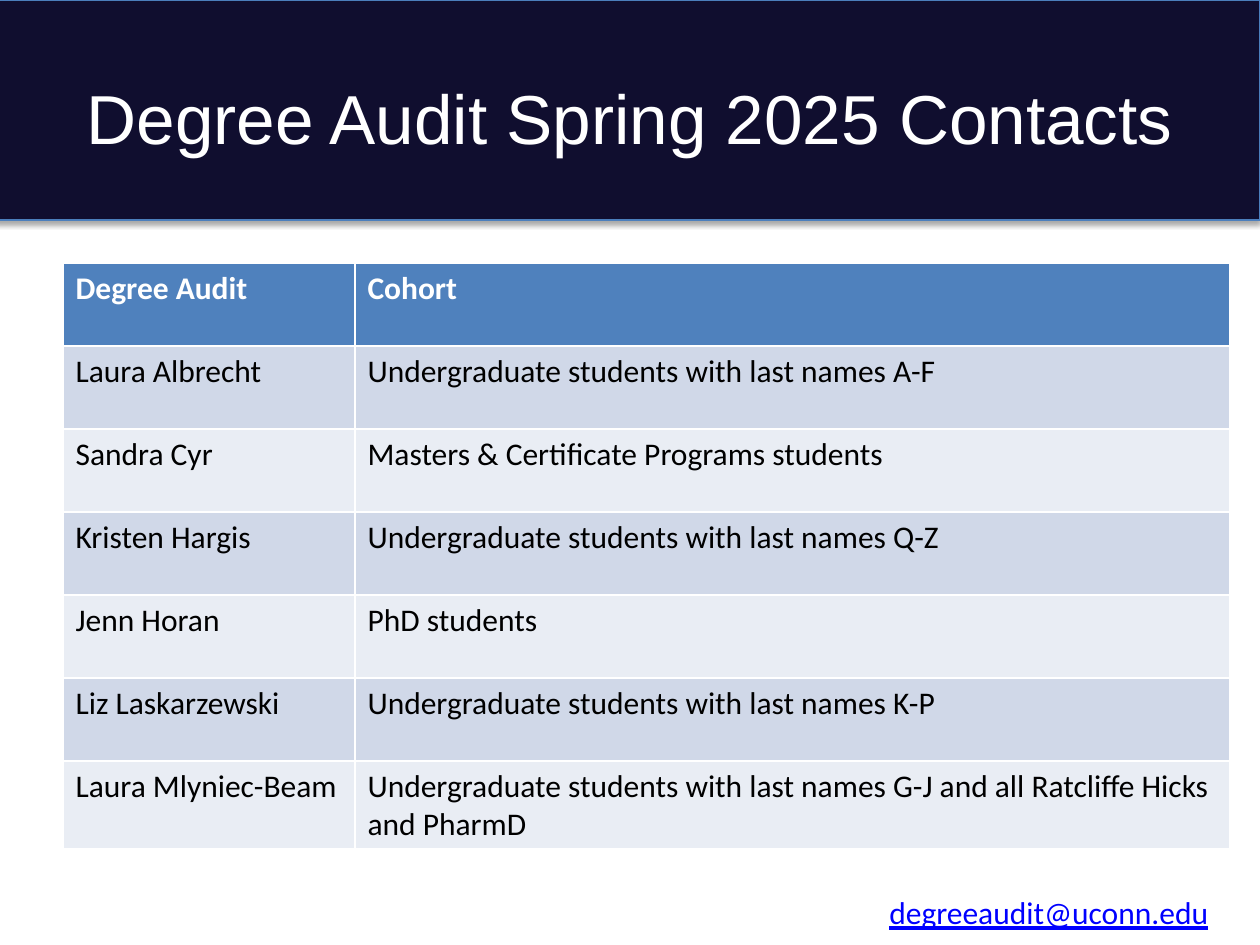
from lxml import etree
from pptx import Presentation, util as u
from pptx.dml.color import RGBColor
from pptx.enum import shapes, text
from pptx.oxml import ns

PX = 914400 / 126
WHITE = RGBColor(0xFF, 0xFF, 0xFF)
BLACK = RGBColor(0, 0, 0)
NAVY = RGBColor(0x10, 0x0E, 0x2F)
EDGE = RGBColor(0x4B, 0x7E, 0xBC)
HEADER = RGBColor(0x4F, 0x81, 0xBD)
BANDS = [RGBColor(0xE9, 0xED, 0xF4), RGBColor(0xD0, 0xD8, 0xE8)]
LINK = RGBColor(0, 0, 0xFF)
CONTACTS = [
    ("Degree Audit", "Cohort"),
    ("Laura Albrecht", "Undergraduate students with last names A-F"),
    ("Sandra Cyr", "Masters & Certificate Programs students"),
    ("Kristen Hargis", "Undergraduate students with last names Q-Z"),
    ("Jenn Horan", "PhD students"),
    ("Liz Laskarzewski", "Undergraduate students with last names K-P"),
    ("Laura Mlyniec-Beam",
     "Undergraduate students with last names G-J and all Ratcliffe Hicks and PharmD"),
]


def px(*lengths):
    return [u.Emu(round(length * PX)) for length in lengths]


def write(frame, words, size=18, font="Calibri", color=BLACK, bold=False,
          underline=False, align=text.PP_ALIGN.LEFT):
    frame.word_wrap = True
    para = frame.paragraphs[0]
    para.alignment = align
    span = para.add_run()
    span.text = words
    span.font.size = u.Pt(size)
    span.font.name = font
    span.font.color.rgb = color
    span.font.bold = bold
    span.font.underline = underline


deck = Presentation()
deck.slide_width, deck.slide_height = px(1260, 945)
page = deck.slides.add_slide(deck.slide_layouts[6])

banner = page.shapes.add_shape(shapes.MSO_SHAPE.RECTANGLE, *px(-5, 0, 1265, 220))
banner.fill.solid()
banner.fill.fore_color.rgb = NAVY
banner.line.color.rgb = EDGE
banner.line.width = u.Pt(0.75)
banner.shadow.inherit = False
effects = banner._element.spPr.find(ns.qn("a:effectLst"))
shadow = etree.SubElement(effects, ns.qn("a:outerShdw"), blurRad=str(u.Pt(3.1)),
                          dist=str(u.Pt(1.8)), dir="5400000", rotWithShape="0")
shade = etree.SubElement(shadow, ns.qn("a:srgbClr"), val="000000")
etree.SubElement(shade, ns.qn("a:alpha"), val="35000")

title = page.shapes.add_textbox(*px(63, 38, 1134, 158))
title.text_frame.vertical_anchor = text.MSO_ANCHOR.MIDDLE
write(title.text_frame, "Degree Audit Spring 2025 Contacts", size=39.6, font="Arial",
      color=WHITE, align=text.PP_ALIGN.CENTER)

table = page.shapes.add_table(len(CONTACTS), 2, *px(63, 263, 1167, 581)).table
for column, width in zip(table.columns, px(292, 875)):
    column.width = width
for row, contact in enumerate(CONTACTS):
    table.rows[row].height = px(83)[0]
    for column, words in enumerate(contact):
        cell = table.cell(row, column)
        cell.fill.solid()
        cell.fill.fore_color.rgb = BANDS[row % 2] if row else HEADER
        write(cell.text_frame, words, color=BLACK if row else WHITE, bold=row == 0)

email = page.shapes.add_textbox(*px(877, 887, 353, 50))
write(email.text_frame, "degreeaudit@uconn.edu", color=LINK, underline=True)

deck.save("out.pptx")
